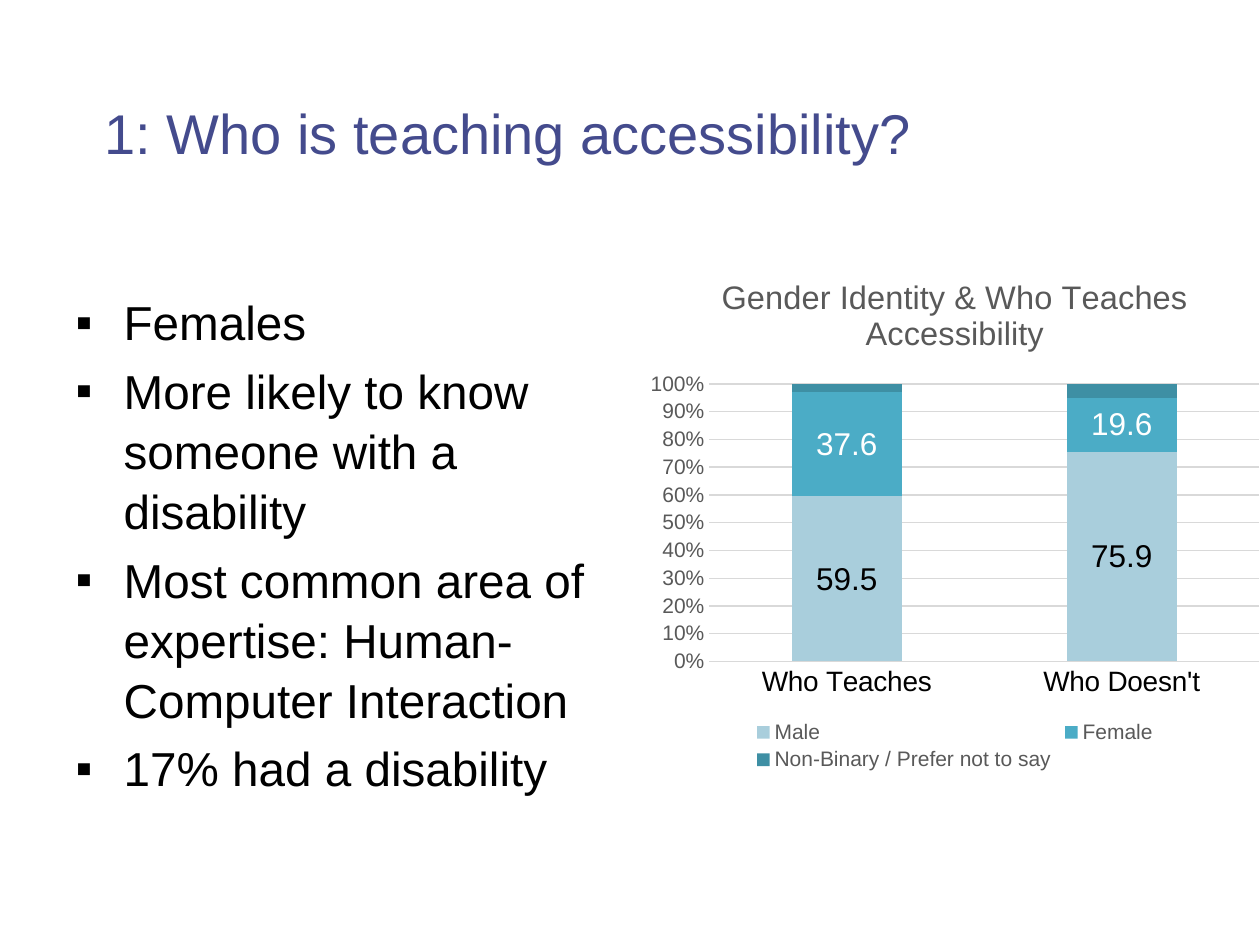
"""Build the slide on who is teaching accessibility."""
from dataclasses import dataclass

import pptx
import pptx.chart.data
import pptx.dml.color
import pptx.enum.chart
import pptx.enum.text
import pptx.oxml
import pptx.util
from lxml import etree

HEADING = "1: Who is teaching accessibility?"
FINDINGS = [
    "Females",
    "More likely to know someone with a disability",
    "Most common area of expertise: Human-Computer Interaction",
    "17% had a disability",
]
CHART_TITLE = "Gender Identity & Who Teaches Accessibility"
GROUPS = ["Who Teaches", "Who Doesn't"]
GENDERS = [
    ("Male", (59.5, 75.9), "A9CEDC", "000000"),
    ("Female", (37.6, 19.6), "4BACC6", "FFFFFF"),
    ("Non-Binary / Prefer not to say", (3, 5), "3E8FA4", None),
]
HEADING_BOX = (92, 92, 1128, 96)
FINDINGS_BOX = (63, 284, 543, 504)
CHART_BOX = (638, 252, 634, 524)
INDENT = 48


@dataclass(frozen=True)
class Theme:
    font: str = "Arial"
    heading: str = "444B8D"
    text: str = "000000"
    muted: str = "595959"
    grid: str = "D9D9D9"
    heading_size: float = 32
    body_size: float = 27.2
    chart_title_size: float = 18.6
    value_size: float = 18
    group_size: float = 16
    small_size: float = 12


THEME = Theme()


def px(length):
    return pptx.util.Emu(round(length * 914400 / 126))


def rgb(color):
    return pptx.dml.color.RGBColor.from_string(color)


def style(font, size, color):
    font.name = THEME.font
    font.size = pptx.util.Pt(size)
    font.bold = False
    font.color.rgb = rgb(color)


def rule(line):
    line.color.rgb = rgb(THEME.grid)
    line.width = pptx.util.Pt(0.75)


def place(placeholder, box):
    placeholder.left, placeholder.top, placeholder.width, placeholder.height = map(px, box)
    frame = placeholder.text_frame
    frame.word_wrap = True
    frame.auto_size = pptx.enum.text.MSO_AUTO_SIZE.NONE
    frame.vertical_anchor = pptx.enum.text.MSO_ANCHOR.TOP
    return frame


def add_bullet(paragraph):
    properties = paragraph._p.get_or_add_pPr()
    properties.set("marL", str(px(INDENT)))
    properties.set("indent", str(-px(INDENT)))
    bullet = etree.SubElement(properties, pptx.oxml.ns.qn("a:buChar"))
    bullet.set("char", "▪")


def fill_heading(slide):
    frame = place(slide.shapes.title, HEADING_BOX)
    frame.text = HEADING
    paragraph = frame.paragraphs[0]
    paragraph.alignment = pptx.enum.text.PP_ALIGN.LEFT
    style(paragraph.font, THEME.heading_size, THEME.heading)


def fill_findings(slide):
    frame = place(slide.placeholders[1], FINDINGS_BOX)
    frame.text = "\n".join(FINDINGS)
    for position, paragraph in enumerate(frame.paragraphs):
        add_bullet(paragraph)
        paragraph.line_spacing = 1.05
        paragraph.space_before = pptx.util.Pt(5 if position else 0)
        style(paragraph.font, THEME.body_size, THEME.text)


def add_gender_chart(slide):
    shares = pptx.chart.data.CategoryChartData(number_format="General")
    shares.categories = GROUPS
    for name, values, _, _ in GENDERS:
        shares.add_series(name, values)
    kind = pptx.enum.chart.XL_CHART_TYPE.COLUMN_STACKED_100
    chart = slide.shapes.add_chart(kind, *map(px, CHART_BOX), shares).chart
    style(chart.font, 10, THEME.text)

    chart.has_title = True
    chart.chart_title.include_in_layout = False
    title = chart.chart_title.text_frame
    title.text = CHART_TITLE
    style(title.paragraphs[0].font, THEME.chart_title_size, THEME.muted)

    chart.has_legend = True
    chart.legend.position = pptx.enum.chart.XL_LEGEND_POSITION.BOTTOM
    chart.legend.include_in_layout = False
    style(chart.legend.font, THEME.small_size, THEME.muted)

    groups, scale = chart.category_axis, chart.value_axis
    for axis in (groups, scale):
        axis.major_tick_mark = pptx.enum.chart.XL_TICK_MARK.NONE
    style(groups.tick_labels.font, THEME.group_size, THEME.text)
    style(scale.tick_labels.font, THEME.small_size, THEME.muted)
    scale.tick_labels.number_format = "0%"
    scale.tick_labels.number_format_is_linked = False
    scale.has_major_gridlines = True
    scale.format.line.fill.background()
    rule(groups.format.line)
    rule(scale.major_gridlines.format.line)

    plot = chart.plots[0]
    plot.vary_by_categories = False
    plot.gap_width, plot.overlap = 150, 100
    for series, (_, _, color, label_color) in zip(plot.series, GENDERS):
        series.format.fill.solid()
        series.format.fill.fore_color.rgb = rgb(color)
        if label_color:
            series.data_labels.show_value = True
            style(series.data_labels.font, THEME.value_size, label_color)


def main():
    deck = pptx.Presentation()
    deck.slide_width, deck.slide_height = px(1260), px(945)
    slide = deck.slides.add_slide(deck.slide_layouts[1])
    fill_heading(slide)
    fill_findings(slide)
    add_gender_chart(slide)
    deck.save("out.pptx")


if __name__ == "__main__":
    main()
